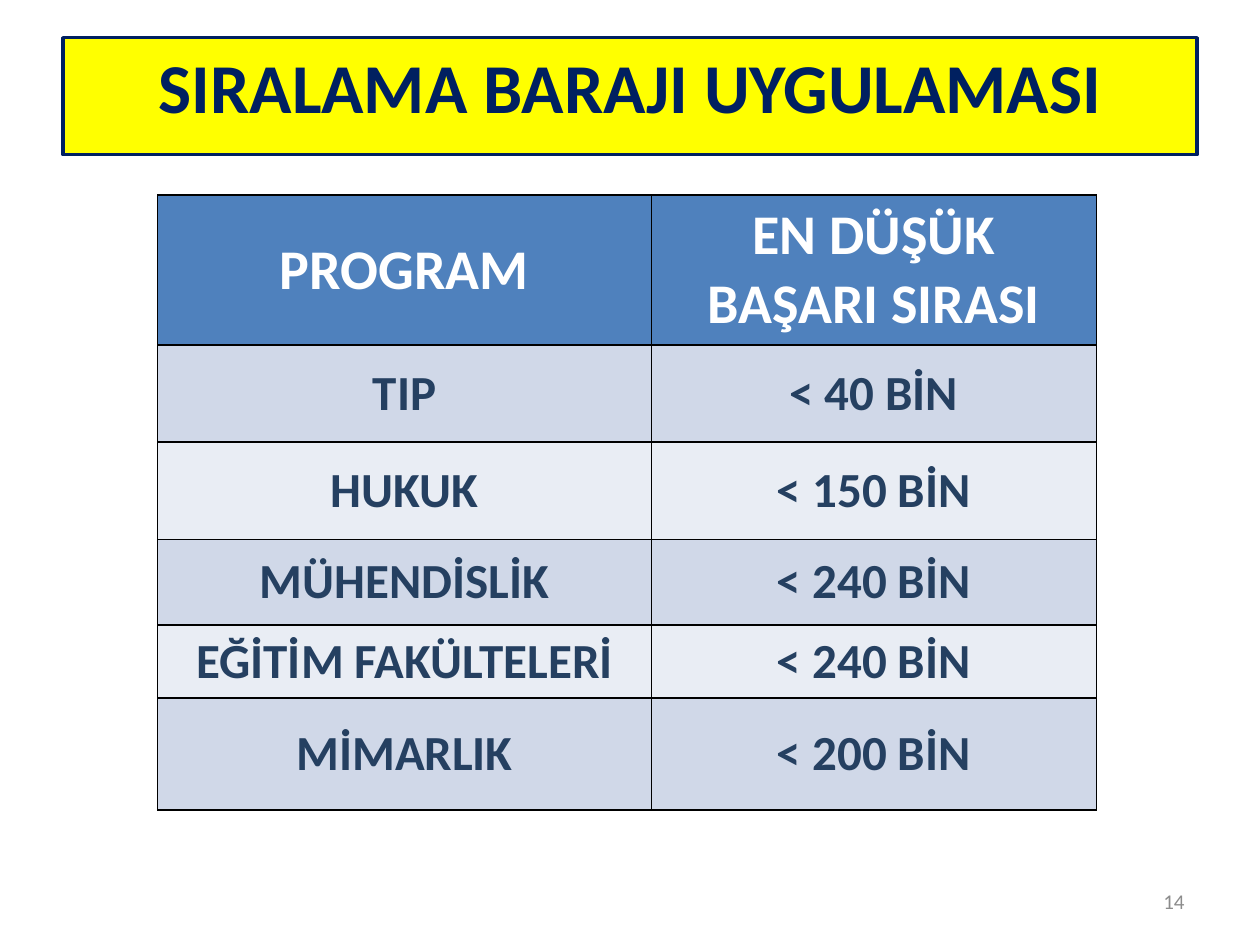
from typing import NamedTuple

from lxml.etree import SubElement
from pptx import Presentation
from pptx.dml.color import RGBColor
from pptx.enum.text import MSO_ANCHOR, MSO_AUTO_SIZE, PP_ALIGN
from pptx.oxml.ns import qn
from pptx.util import Cm, Pt

COLORS = {
    "navy": "002060",
    "yellow": "FFFF00",
    "header": "4F81BD",
    "band_dark": "D0D8E8",
    "band_light": "E9EDF4",
    "body_text": "254061",
    "white": "FFFFFF",
    "black": "000000",
    "gray": "8C8C8C",
}
FONT = "Calibri"
COLUMN_WIDTHS = (9.95, 8.97)


class ProgramRow(NamedTuple):
    program: str
    rank: str
    height: float


ROWS = [
    ProgramRow("PROGRAM", "EN DÜŞÜK BAŞARI SIRASI", 3.02),
    ProgramRow("TIP", "< 40 BİN", 1.96),
    ProgramRow("HUKUK", "< 150 BİN", 1.96),
    ProgramRow("MÜHENDİSLİK", "< 240 BİN", 1.73),
    ProgramRow("EĞİTİM FAKÜLTELERİ", "< 240 BİN", 1.45),
    ProgramRow("MİMARLIK", "< 200 BİN", 2.26),
]


def color(name: str) -> RGBColor:
    return RGBColor.from_string(COLORS[name])


def write_text(frame, text: str, size: int, color_name: str,
               align=PP_ALIGN.CENTER, bold: bool = True) -> None:
    frame.text = text
    para = frame.paragraphs[0]
    para.alignment = align
    font = para.runs[0].font
    font.name, font.size, font.bold = FONT, Pt(size), bold
    font.color.rgb = color(color_name)


def add_cell_borders(cell) -> None:
    properties = cell._tc.get_or_add_tcPr()
    for side in ("lnL", "lnR", "lnT", "lnB"):
        line = SubElement(properties, qn(f"a:{side}"), w=str(Pt(1)))
        fill = SubElement(line, qn("a:solidFill"))
        SubElement(fill, qn("a:srgbClr"), val=COLORS["black"])


def add_program_table(slide) -> None:
    frame = slide.shapes.add_table(
        len(ROWS), len(COLUMN_WIDTHS), Cm(3.18), Cm(3.93),
        Cm(sum(COLUMN_WIDTHS)), Cm(sum(row.height for row in ROWS)))
    table = frame.table
    for column, width in zip(table.columns, COLUMN_WIDTHS):
        column.width = Cm(width)
    for index, row in enumerate(ROWS):
        table.rows[index].height = Cm(row.height)
        if index == 0:
            fill_name, text_color, size = "header", "white", 32
        else:
            fill_name = "band_dark" if index % 2 else "band_light"
            text_color, size = "body_text", 28
        for cell, text in zip(table.rows[index].cells, (row.program, row.rank)):
            write_text(cell.text_frame, text, size, text_color)
            cell.vertical_anchor = MSO_ANCHOR.MIDDLE
            cell.margin_left = cell.margin_right = Cm(0.19)
            cell.margin_top = cell.margin_bottom = Cm(0.13)
            add_cell_borders(cell)
            cell.fill.solid()
            cell.fill.fore_color.rgb = color(fill_name)


def format_title(title) -> None:
    title.left, title.top = Cm(1.27), Cm(0.76)
    title.width, title.height = Cm(22.86), Cm(2.36)
    title.fill.solid()
    title.fill.fore_color.rgb = color("yellow")
    title.line.color.rgb = color("navy")
    title.line.width = Pt(2)
    frame = title.text_frame
    frame.auto_size = MSO_AUTO_SIZE.NONE
    frame.vertical_anchor = MSO_ANCHOR.TOP
    write_text(frame, "SIRALAMA BARAJI UYGULAMASI", 40, "navy")


def add_page_number(slide) -> None:
    box = slide.shapes.add_textbox(Cm(18.2), Cm(17.66), Cm(5.93), Cm(1.01))
    box.text_frame.word_wrap = True
    box.text_frame.vertical_anchor = MSO_ANCHOR.MIDDLE
    write_text(box.text_frame, "14", 12, "gray", PP_ALIGN.RIGHT, bold=False)


def main() -> None:
    deck = Presentation()
    deck.slide_width, deck.slide_height = Cm(25.4), Cm(19.05)
    slide = deck.slides.add_slide(deck.slide_layouts[5])
    format_title(slide.shapes.title)
    add_program_table(slide)
    add_page_number(slide)
    deck.save("out.pptx")


if __name__ == "__main__":
    main()
